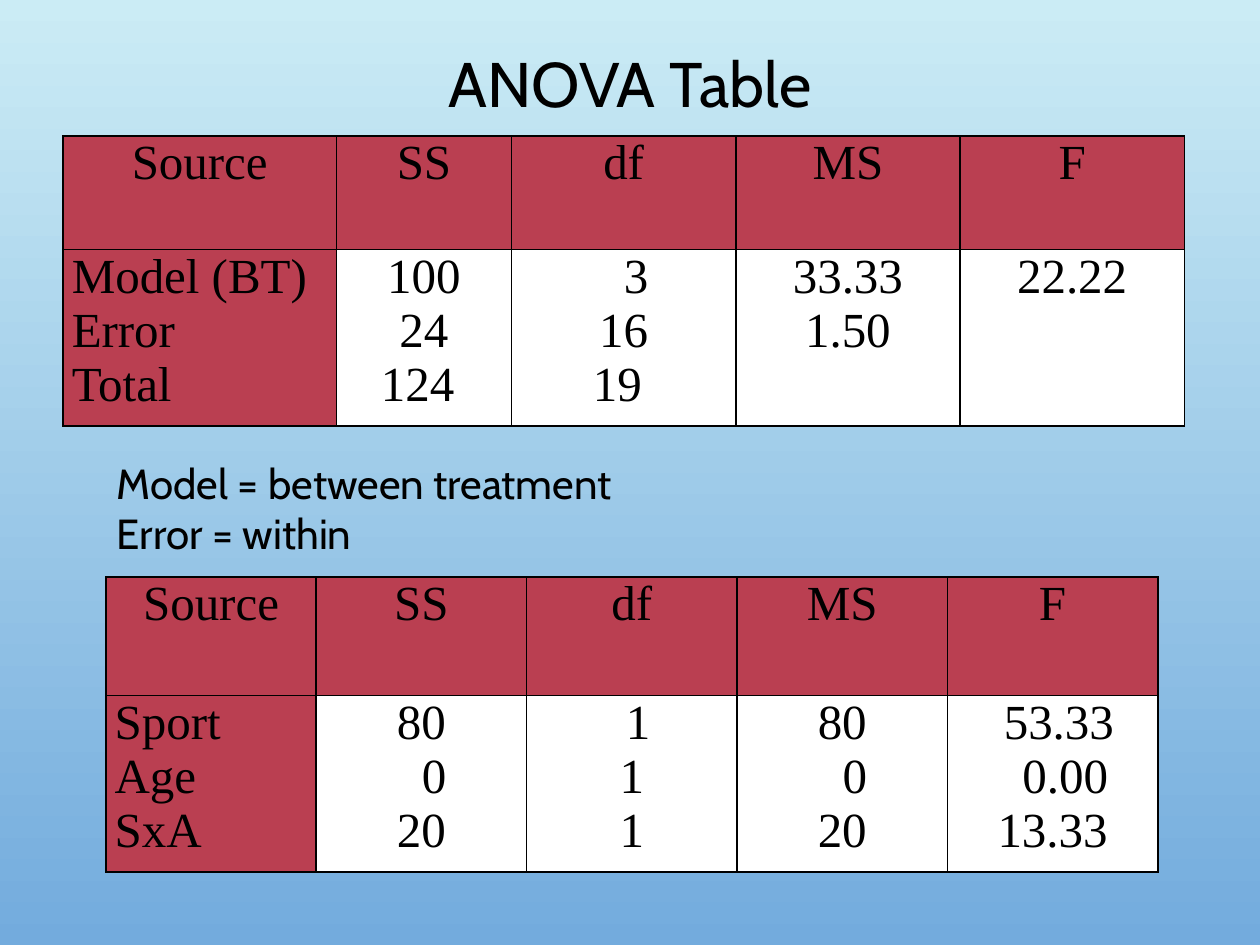
from lxml.etree import SubElement as Sub
from pptx import Presentation
from pptx.dml.color import RGBColor as RGB
from pptx.enum.text import MSO_ANCHOR as Anchor, PP_ALIGN as Align
from pptx.oxml.ns import qn
from pptx.util import Inches, Pt

BLACK = RGB(0, 0, 0)
WHITE = RGB(255, 255, 255)
RED = RGB(0xBA, 0x3F, 0x51)
SKY = RGB(0xCB, 0xEC, 0xF5)
BLUE = RGB(0x73, 0xAB, 0xDD)

HEAD = ["Source", "SS", "df", "MS", "F"]
STEP = Inches(0.1)
MODEL = [
    ["Model (BT)", "Error", "Total"],
    ["100", "24", ("124", "marR", 1)],
    [("3", "marL", 2), "16", ("19", "marR", 1)],
    ["33.33", "1.50"],
    ["22.22"],
]
SPORT = [
    ["Sport", "Age", "SxA"],
    ["80", ("0", "marL", 2), "20"],
    [("1", "marL", 1), "1", "1"],
    ["80", ("0", "marL", 2), "20"],
    [("53.33", "marL", 1), ("0.00", "marL", 2), "13.33"],
]


def apply(item, form):
    for key, val in form.items():
        setattr(item, key, val)


def write(frame, lines, face, size, align):
    for num, line in enumerate(lines):
        text, side, pad = line if isinstance(line, tuple) else (line, "marL", 0)
        para = frame.paragraphs[0] if num == 0 else frame.add_paragraph()
        para.alignment = align
        if pad:
            para._p.get_or_add_pPr().set(side, str(pad * STEP))
        run = para.add_run()
        run.text = text
        apply(run.font, {"name": face, "size": Pt(size)})
        run.font.color.rgb = BLACK


def add_text(slide, box, lines, size, align, anchor):
    frame = slide.shapes.add_textbox(*map(Inches, box)).text_frame
    apply(frame, {"word_wrap": True, "vertical_anchor": anchor})
    write(frame, lines, "Cabin", size, align)
    return frame


def add_edges(cell):
    props = cell._tc.get_or_add_tcPr()
    for side in ("L", "R", "T", "B"):
        edge = Sub(props, qn("a:ln" + side), w=str(Pt(1)))
        fill = Sub(edge, qn("a:solidFill"))
        Sub(fill, qn("a:srgbClr"), val=str(BLACK))


def add_cell(cell, lines, color, align):
    side = Inches(0.07)
    apply(cell, {"margin_left": side, "margin_right": side,
                 "margin_top": 0, "margin_bottom": 0})
    add_edges(cell)
    cell.fill.solid()
    cell.fill.fore_color.rgb = color
    write(cell.text_frame, lines, "Times New Roman", 28, align)


def add_grid(slide, box, wides, highs, data):
    table = slide.shapes.add_table(2, len(HEAD), *map(Inches, box)).table
    apply(table, {"first_row": False, "horz_banding": False})
    for row, high in zip(table.rows, highs):
        row.height = Inches(high)
    for col, wide in enumerate(wides):
        table.columns[col].width = Inches(wide)
        add_cell(table.cell(0, col), [HEAD[col]], RED, Align.CENTER)
        color, align = (WHITE, Align.CENTER) if col else (RED, Align.LEFT)
        add_cell(table.cell(1, col), data[col], color, align)


def add_back(slide):
    fill = slide.background.fill
    fill.gradient()
    fill.gradient_angle = 270
    for stop, color in zip(fill.gradient_stops, (SKY, BLUE)):
        stop.color.rgb = color


def main():
    deck = Presentation()
    apply(deck, {"slide_width": Inches(10), "slide_height": Inches(7.5)})
    slide = deck.slides.add_slide(deck.slide_layouts[6])
    add_back(slide)
    title = add_text(slide, (0.5, 0.3, 9, 0.78), ["ANOVA Table"], 36,
                     Align.CENTER, Anchor.MIDDLE)
    title.paragraphs[0].line_spacing = 0.9
    add_grid(slide, (0.5, 1.08, 8.9, 2.25),
             [2.17, 1.39] + [1.78] * 3, (0.9, 1.35), MODEL)
    add_text(slide, (0.83, 3.58, 5.42, 0.91),
             ["Model = between treatment", "Error = within"], 24,
             Align.LEFT, Anchor.TOP)
    add_grid(slide, (0.84, 4.58, 8.33, 2.34),
             [1.67] * 5, (0.94, 1.4), SPORT)
    deck.save("out.pptx")


if __name__ == "__main__":
    main()
